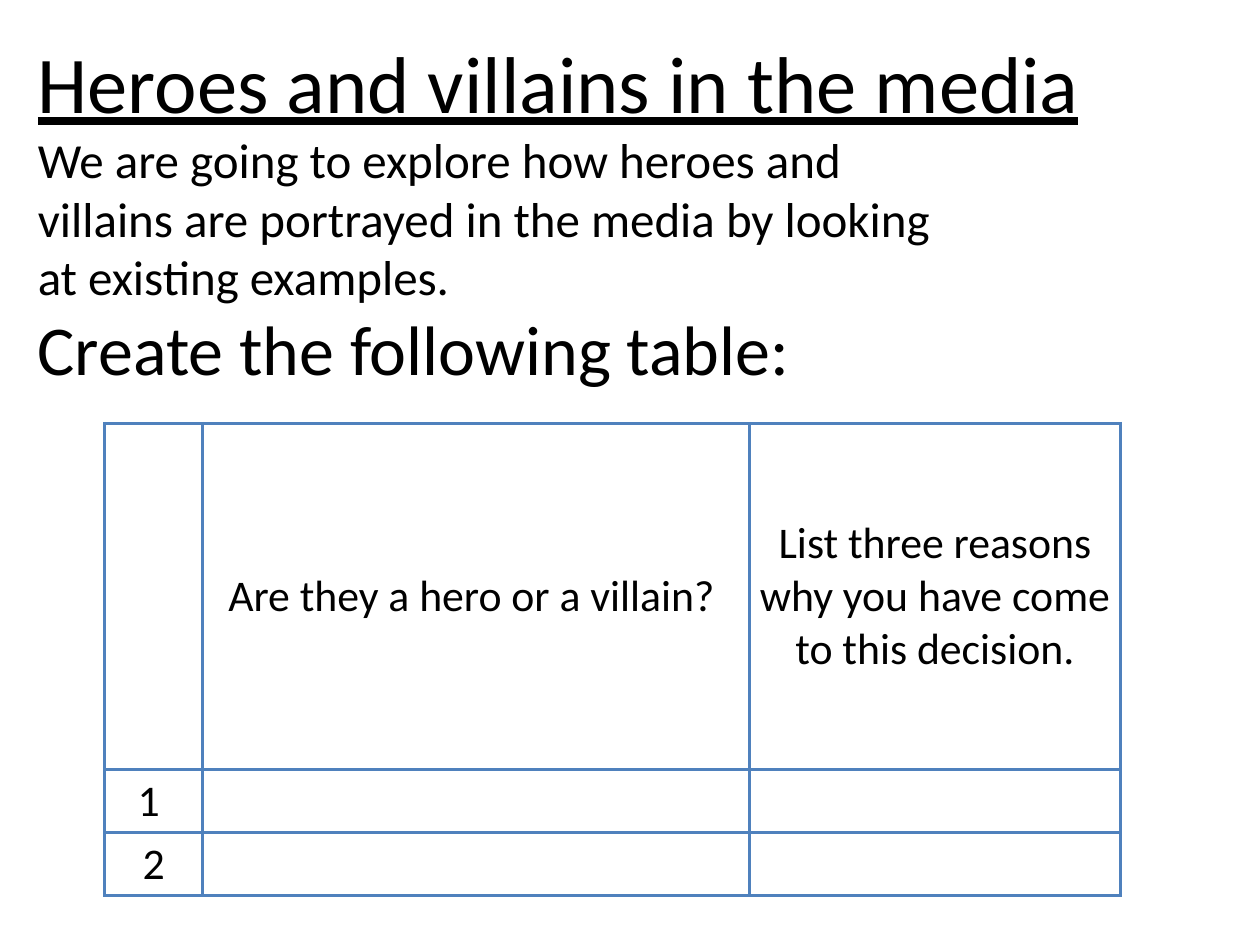
from lxml import etree
from pptx import Presentation
from pptx.dml.color import RGBColor
from pptx.enum.text import MSO_ANCHOR, PP_ALIGN
from pptx.oxml.ns import qn
from pptx.util import Inches, Pt

MIDDLE = MSO_ANCHOR.MIDDLE
CENTER = PP_ALIGN.CENTER
FONT = "Calibri"
COLORS = {"text": "000000", "border": "4F81BD"}
WIDTH, HEIGHT = Inches(10), Inches(7.5)
COLUMN_WIDTHS = [0.78, 4.34, 2.94]
ROW_HEIGHTS = [2.75, 0.5, 0.5]
INTRODUCTION = [
    "We are going to explore how heroes and ",
    "villains are portrayed in the media by looking",
    "at existing examples.",
]
TABLE_TEXT = [
    ["", "Are they a hero or a villain? ",
     "List three reasons why you have come to this decision."],
    ["1 ", "", ""],
    ["2", "", ""],
]


def add_run(paragraph, text, size, underline=False):
    run = paragraph.add_run()
    run.text = text
    run.font.name = FONT
    run.font.size = Pt(size)
    run.font.underline = underline
    run.font.color.rgb = RGBColor.from_string(COLORS["text"])


def set_margins(target, margin):
    target.margin_left = target.margin_right = margin
    target.margin_top = target.margin_bottom = margin


def add_heading_text(slide):
    box = slide.shapes.add_textbox(
        int(WIDTH * 0.03), int(HEIGHT * 0.033), int(WIDTH * 0.833), int(HEIGHT * 0.381))
    frame = box.text_frame
    frame.word_wrap = False
    frame.vertical_anchor = MIDDLE
    set_margins(frame, 0)
    add_run(frame.paragraphs[0], "Heroes and villains in the media", 46, underline=True)
    body = frame.add_paragraph()
    for line in INTRODUCTION:
        add_run(body, line, 28)
        body.add_line_break()
    add_run(body, "Create the following table:", 40)


def set_borders(cell, color, width):
    properties = cell._tc.get_or_add_tcPr()
    for side in ("lnL", "lnR", "lnT", "lnB"):
        line = etree.SubElement(properties, qn(f"a:{side}"), w=str(Pt(width)))
        fill = etree.SubElement(line, qn("a:solidFill"))
        etree.SubElement(fill, qn("a:srgbClr"), val=color)


def format_cell(cell, text):
    set_borders(cell, COLORS["border"], 2)
    cell.fill.background()
    cell.vertical_anchor = MIDDLE
    set_margins(cell, Inches(0.04))
    if text:
        paragraph = cell.text_frame.paragraphs[0]
        paragraph.alignment = CENTER
        add_run(paragraph, text, 25)


def add_answer_table(slide):
    table = slide.shapes.add_table(
        len(ROW_HEIGHTS), len(COLUMN_WIDTHS), int(WIDTH * 0.083), int(HEIGHT * 0.448),
        Inches(sum(COLUMN_WIDTHS)), Inches(sum(ROW_HEIGHTS))).table
    table.first_row = table.horz_banding = False
    for column, width in zip(table.columns, COLUMN_WIDTHS):
        column.width = Inches(width)
    for row, height, texts in zip(table.rows, ROW_HEIGHTS, TABLE_TEXT):
        row.height = Inches(height)
        for cell, text in zip(row.cells, texts):
            format_cell(cell, text)


def main():
    presentation = Presentation()
    presentation.slide_width, presentation.slide_height = WIDTH, HEIGHT
    slide = presentation.slides.add_slide(presentation.slide_layouts[6])
    add_heading_text(slide)
    add_answer_table(slide)
    presentation.save("out.pptx")


if __name__ == "__main__":
    main()
